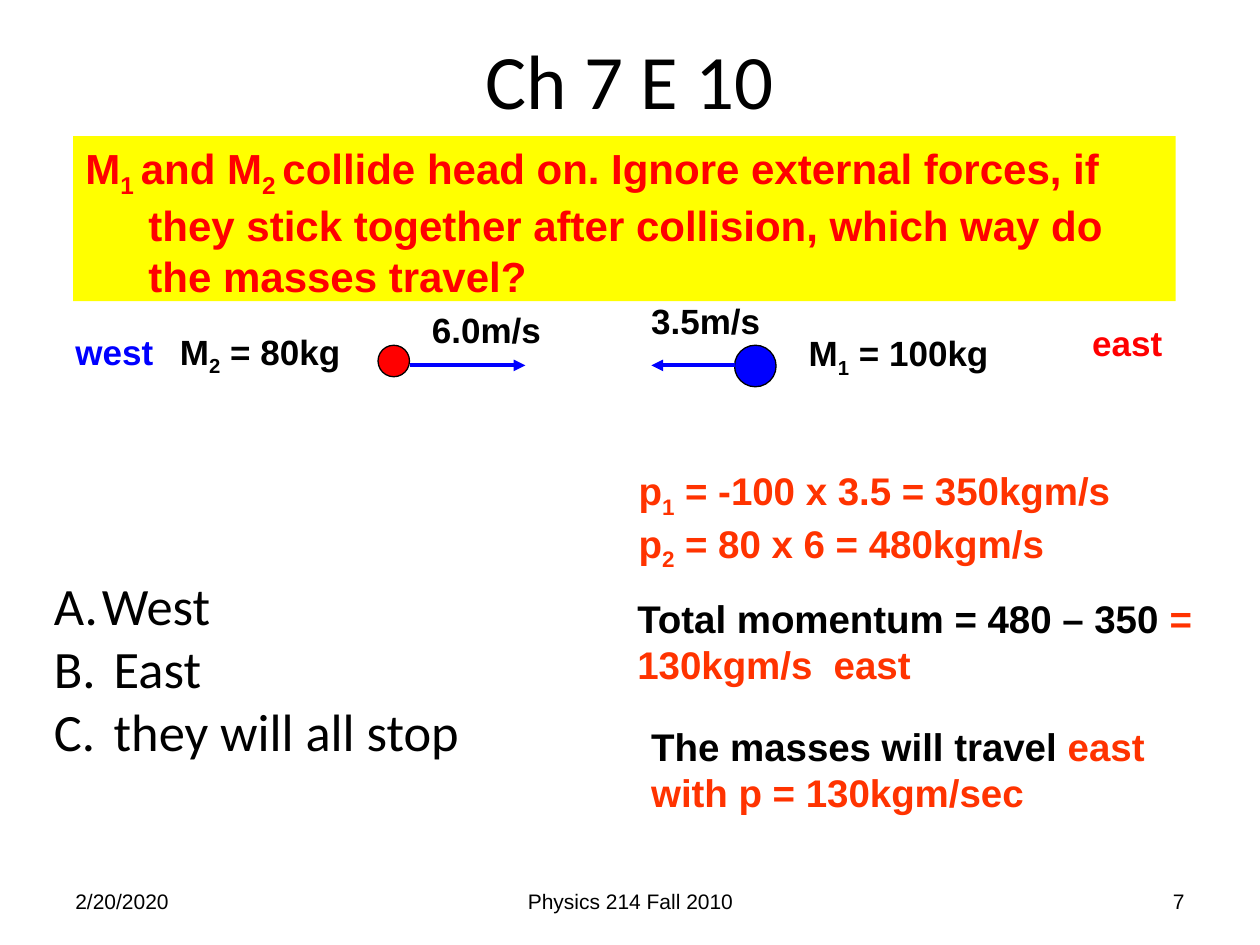
from lxml import etree
from pptx import Presentation
from pptx.dml.color import RGBColor
from pptx.enum import shapes, text
from pptx.oxml import ns
from pptx.util import Inches, Pt

BLACK = RGBColor(0, 0, 0)
RED = RGBColor(0xFF, 0, 0)
BLUE = RGBColor(0, 0, 0xFF)
YELLOW = RGBColor(0xFF, 0xFF, 0)
ORANGE = RGBColor(0xFF, 0x33, 0)
SUB = True
LEFT, CENTER, RIGHT = text.PP_ALIGN.LEFT, text.PP_ALIGN.CENTER, text.PP_ALIGN.RIGHT

TITLE = "Ch 7 E 10"
QUESTION = [
    ("M", RED), ("1 ", RED, SUB), ("and M", RED), ("2 ", RED, SUB),
    ("collide head on. Ignore external forces, if they stick together after "
     "collision, which way do the masses travel?", RED),
]
FOOTERS = [
    ("2/20/2020", 0.5, 2.33, LEFT),
    ("Physics 214 Fall 2010", 3.42, 3.17, CENTER),
    ("7", 7.17, 2.33, RIGHT),
]
WORKINGS = [
    ((4.97, 3.66, 4.52, 0.84), [
        [("p", ORANGE), ("1", ORANGE, SUB), (" = -100 x 3.5 = 350kgm/s", ORANGE)],
        [("p", ORANGE), ("2", ORANGE, SUB), (" = 80 x 6 = 480kgm/s", ORANGE)],
    ]),
    ((4.96, 4.67, 5.35, 0.84), [
        [("Total momentum = 480 – 350 ", BLACK), ("= 130kgm/s  east", ORANGE)],
    ]),
    ((5.07, 5.69, 4.23, 0.84), [
        [("The masses will travel ", BLACK), ("east with p = 130kgm/sec", ORANGE)],
    ]),
]
LABELS = [
    ((3.33, 2.4, 1.1, 0.43), [("6.0m/s", BLACK)]),
    ((5.07, 2.33, 1.1, 0.43), [("3.5m/s", BLACK)]),
    ((6.32, 2.58, 1.64, 0.43), [("M", BLACK), ("1", BLACK, SUB), (" = 100kg", BLACK)]),
    ((1.33, 2.57, 1.48, 0.43), [("M", BLACK), ("2", BLACK, SUB), (" = 80kg", BLACK)]),
    ((8.57, 2.5, 0.76, 0.43), [("east", RED)]),
    ((0.5, 2.57, 0.82, 0.43), [("west", BLUE)]),
]
BALLS = [(3, 0.25, RED), (5.83, 0.33, BLUE)]
BALL_TOP = 2.74
VELOCITIES = [(3.25, 4.17), (5.83, 5.17)]
VELOCITY_Y = 2.9
ANSWERS = ["West", " East", " they will all stop"]


def fill_text(shape, paragraphs, size, font="Arial", bold=False, align=LEFT,
              anchor=text.MSO_ANCHOR.TOP, wrap=True):
    frame = shape.text_frame
    frame.word_wrap = wrap
    frame.vertical_anchor = anchor
    for index, runs in enumerate(paragraphs):
        paragraph = frame.add_paragraph() if index else frame.paragraphs[0]
        paragraph.alignment = align
        for content, colour, *subscript in runs:
            run = paragraph.add_run()
            run.text = content
            run.font.name = font
            run.font.size = Pt(size)
            run.font.bold = bold
            run.font.color.rgb = colour
            if subscript:
                run.font._element.set("baseline", "-25000")
    return frame


def add_text(slide, box, paragraphs, size, **style):
    shape = slide.shapes.add_textbox(*map(Inches, box))
    return fill_text(shape, paragraphs, size, **style)


def add_shape(slide, kind, box, colour):
    shape = slide.shapes.add_shape(kind, *map(Inches, box))
    shape.shadow.inherit = False
    shape.fill.solid()
    shape.fill.fore_color.rgb = colour
    shape.line.fill.background()
    return shape


def set_indent(paragraph, inches):
    properties = paragraph._p.get_or_add_pPr()
    properties.set("marL", str(Inches(inches)))
    properties.set("indent", str(-Inches(inches)))
    return properties


def add_arrow(slide, start, end, y):
    arrow = slide.shapes.add_connector(
        shapes.MSO_CONNECTOR.STRAIGHT, Inches(start), Inches(y), Inches(end), Inches(y))
    arrow.line.color.rgb = BLUE
    arrow.line.width = Pt(2.25)
    etree.SubElement(arrow.line._get_or_add_ln(), ns.qn("a:tailEnd"), type="triangle")
    etree.SubElement(arrow._element.spPr, ns.qn("a:effectLst"))


def main():
    presentation = Presentation()
    presentation.slide_width, presentation.slide_height = Inches(10), Inches(7.5)
    slide = presentation.slides.add_slide(presentation.slide_layouts[6])
    middle = text.MSO_ANCHOR.MIDDLE

    for content, left, width, align in FOOTERS:
        add_text(slide, (left, 6.95, width, 0.4), [[(content, BLACK)]], 12,
                 align=align, anchor=middle)

    banner = add_shape(slide, shapes.MSO_SHAPE.RECTANGLE, (0.58, 1.08, 8.75, 1.31), YELLOW)
    question = fill_text(banner, [QUESTION], 24, bold=True).paragraphs[0]
    set_indent(question, 0.5)
    question.space_before = Pt(3)

    for box, paragraphs in WORKINGS:
        add_text(slide, box, paragraphs, 22, bold=True)

    for left, diameter, colour in BALLS:
        ball = add_shape(slide, shapes.MSO_SHAPE.OVAL,
                         (left, BALL_TOP, diameter, diameter), colour)
        ball.line.color.rgb = BLACK
        ball.line.width = Pt(0.75)
    for start, end in VELOCITIES:
        add_arrow(slide, start, end, VELOCITY_Y)
    for box, runs in LABELS:
        add_text(slide, box, [runs], 20, bold=True, wrap=False)

    add_text(slide, (0.5, 0, 9, 1.25), [[(TITLE, BLACK)]], 44, font="Calibri",
             align=CENTER, anchor=middle)
    answers = add_text(slide, (0.33, 4.5, 4.42, 1.62),
                       [[(answer, BLACK)] for answer in ANSWERS], 30, font="Calibri")
    for paragraph in answers.paragraphs:
        properties = set_indent(paragraph, 0.38)
        etree.SubElement(properties, ns.qn("a:buFont"), typeface="+mj-lt")
        etree.SubElement(properties, ns.qn("a:buAutoNum"), type="alphaUcPeriod")

    presentation.save("out.pptx")


if __name__ == "__main__":
    main()
